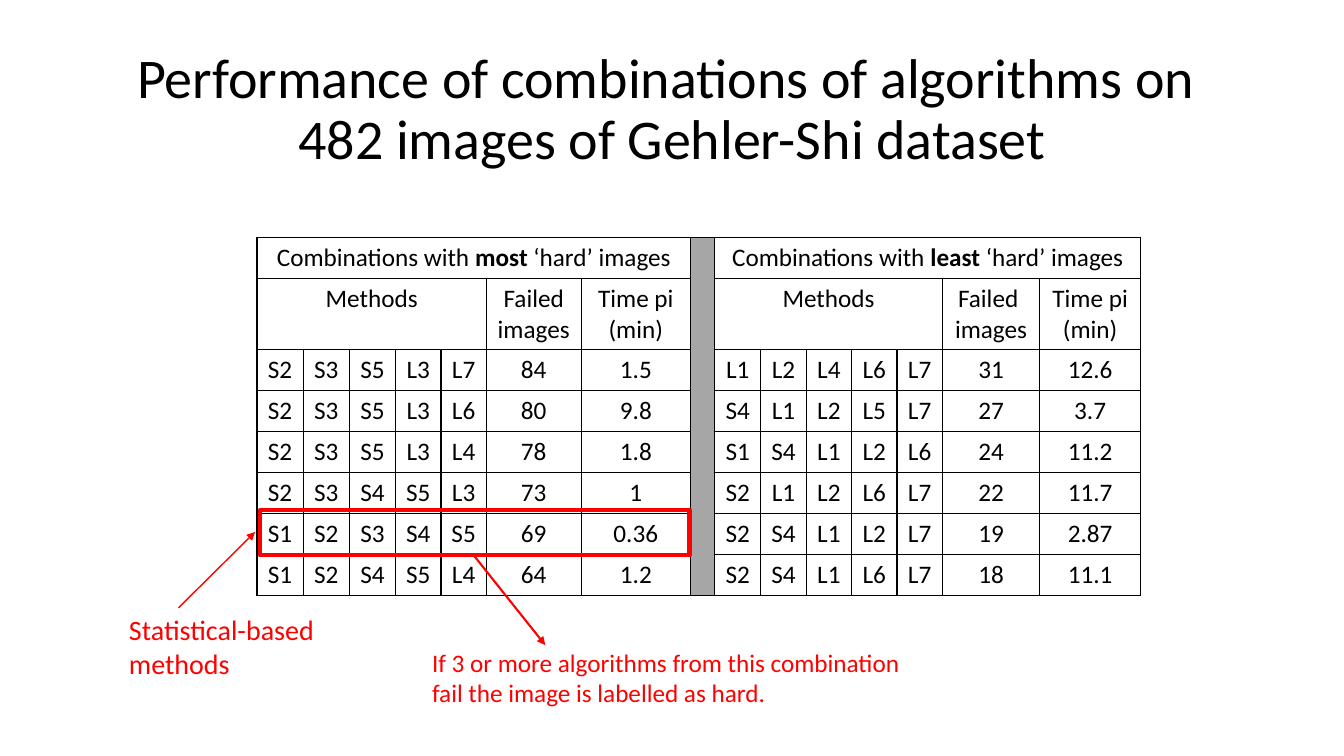
"""Build the slide on combinations of algorithms."""
from dataclasses import dataclass

from lxml import etree
from pptx import Presentation
from pptx.dml.color import RGBColor
from pptx.enum.shapes import MSO_CONNECTOR, MSO_SHAPE
from pptx.enum.text import MSO_ANCHOR, PP_ALIGN
from pptx.oxml.ns import qn
from pptx.util import Pt

BLACK = RGBColor(0, 0, 0)
GREY = RGBColor(0xA6, 0xA6, 0xA6)
RED = RGBColor(0xFF, 0, 0)
LEFT, CENTER = PP_ALIGN.LEFT, PP_ALIGN.CENTER
TOP, MIDDLE = MSO_ANCHOR.TOP, MSO_ANCHOR.MIDDLE
STRAIGHT = MSO_CONNECTOR.STRAIGHT
RECT = MSO_SHAPE.RECTANGLE
FONT = "Calibri"


@dataclass
class Look:
    size: float
    color: RGBColor = BLACK
    align: PP_ALIGN = CENTER


@dataclass
class Label:
    text: str
    box: tuple[float, float, float, float]
    look: Look
    anchor: MSO_ANCHOR = TOP
    space: float = 1.0


@dataclass
class Arrow:
    start: tuple[float, float]
    end: tuple[float, float]
    width: float


@dataclass
class Side:
    col: int
    word: str
    failed: list[str]
    rows: list[str]


CELL = Look(18)
LABELS = [
    Label("Performance of combinations of algorithms on \n482 images of Gehler-Shi dataset",
          (66, 27, 828, 104.4), Look(40), MIDDLE, 0.9),
    Label("Statistical-based methods", (85, 434.2, 215.3, 55.7), Look(20, RED, LEFT)),
    Label("If 3 or more algorithms from this combination fail the image is labelled as hard.",
          (301.5, 458.5, 358.5, 51), Look(18, RED, LEFT)),
]
ARROWS = [
    Arrow((127.5, 434.2), (182.2, 380), 1),
    Arrow((338.4, 396.7), (389.5, 460.8), 1.5),
]
SIDES = [
    Side(0, "most", ["Failed images"], [
        "S2 S3 S5 L3 L7 84 1.5",
        "S2 S3 S5 L3 L6 80 9.8",
        "S2 S3 S5 L3 L4 78 1.8",
        "S2 S3 S4 S5 L3 73 1",
        "S1 S2 S3 S4 S5 69 0.36",
        "S1 S2 S4 S5 L4 64 1.2",
    ]),
    Side(8, "least", ["Failed ", "images"], [
        "L1 L2 L4 L6 L7 31 12.6",
        "S4 L1 L2 L5 L7 27 3.7",
        "S1 S4 L1 L2 L6 24 11.2",
        "S2 L1 L2 L6 L7 22 11.7",
        "S2 S4 L1 L2 L7 19 2.87",
        "S2 S4 L1 L6 L7 18 11.1",
    ]),
]
GAP = 7
WIDTHS = [33] * 3 + [32.4] * 2 + [67.7, 78.2, 16.8, 33] + [32.4] * 4 + [69.6, 72]
HEIGHTS = [29.25, 50.7] + [29.25] * 6


def add_run(para, text: str, look: Look, bold: bool = False) -> None:
    run = para.add_run()
    run.text = text
    font = run.font
    font.name, font.size, font.bold = FONT, Pt(look.size), bold
    font.color.rgb = look.color


def put(cell, lines: list[str]) -> None:
    frame = cell.text_frame
    for i, line in enumerate(lines):
        para = frame.add_paragraph() if i else frame.paragraphs[0]
        para.alignment = CELL.align
        add_run(para, line, CELL)


def add_label(slide, label: Label) -> None:
    frame = slide.shapes.add_textbox(*map(Pt, label.box)).text_frame
    frame.word_wrap = True
    frame.vertical_anchor = label.anchor
    para = frame.paragraphs[0]
    para.alignment = label.look.align
    para.line_spacing = label.space
    for i, line in enumerate(label.text.split("\n")):
        if i:
            para.add_line_break()
        add_run(para, line, label.look)


def add_arrow(slide, arrow: Arrow) -> None:
    link = slide.shapes.add_connector(STRAIGHT, *map(Pt, arrow.start + arrow.end))
    link.line.color.rgb = RED
    link.line.width = Pt(arrow.width)
    etree.SubElement(link.line._get_or_add_ln(), qn("a:tailEnd"), type="triangle")
    etree.SubElement(link._element.spPr, qn("a:effectLst"))


def add_edges(cell) -> None:
    props = cell._tc.get_or_add_tcPr()
    for side in "LRTB":
        edge = etree.SubElement(props, qn(f"a:ln{side}"), w=str(Pt(1)))
        fill = etree.SubElement(edge, qn("a:solidFill"))
        etree.SubElement(fill, qn("a:srgbClr"), val=str(BLACK))


def fill_side(grid, side: Side) -> None:
    col = side.col
    grid.cell(0, col).merge(grid.cell(0, col + 6))
    grid.cell(1, col).merge(grid.cell(1, col + 4))
    head = grid.cell(0, col).text_frame.paragraphs[0]
    head.alignment = CENTER
    add_run(head, "Combinations with ", CELL)
    add_run(head, side.word, CELL, True)
    add_run(head, " ‘hard’ images", CELL)
    put(grid.cell(1, col), ["Methods"])
    put(grid.cell(1, col + 5), side.failed)
    put(grid.cell(1, col + 6), ["Time pi", "(min)"])
    for r, row in enumerate(side.rows, 2):
        for c, value in enumerate(row.split(), col):
            put(grid.cell(r, c), [value])


def add_grid(slide) -> None:
    grid = slide.shapes.add_table(
        len(HEIGHTS), len(WIDTHS), Pt(183.6), Pt(169.5),
        Pt(sum(WIDTHS)), Pt(sum(HEIGHTS))).table
    grid.first_row = grid.horz_banding = False
    for col, width in zip(grid.columns, WIDTHS):
        col.width = Pt(width)
    for row, height in zip(grid.rows, HEIGHTS):
        row.height = Pt(height)
    for cell in grid.iter_cells():
        add_edges(cell)
        cell.fill.background()
    grid.cell(0, GAP).merge(grid.cell(len(HEIGHTS) - 1, GAP))
    gap = grid.cell(0, GAP).fill
    gap.solid()
    gap.fore_color.rgb = GREY
    for side in SIDES:
        fill_side(grid, side)


def add_frame(slide) -> None:
    box = slide.shapes.add_shape(RECT, Pt(185.8), Pt(364.3), Pt(306.7), Pt(32.4))
    box.shadow.inherit = False
    box.fill.background()
    box.line.color.rgb = RED
    box.line.width = Pt(3)


def main() -> None:
    deck = Presentation()
    deck.slide_width, deck.slide_height = Pt(960), Pt(540)
    slide = deck.slides.add_slide(deck.slide_layouts[6])
    add_grid(slide)
    add_frame(slide)
    for label in LABELS:
        add_label(slide, label)
    for arrow in ARROWS:
        add_arrow(slide, arrow)
    deck.save("out.pptx")


if __name__ == "__main__":
    main()
